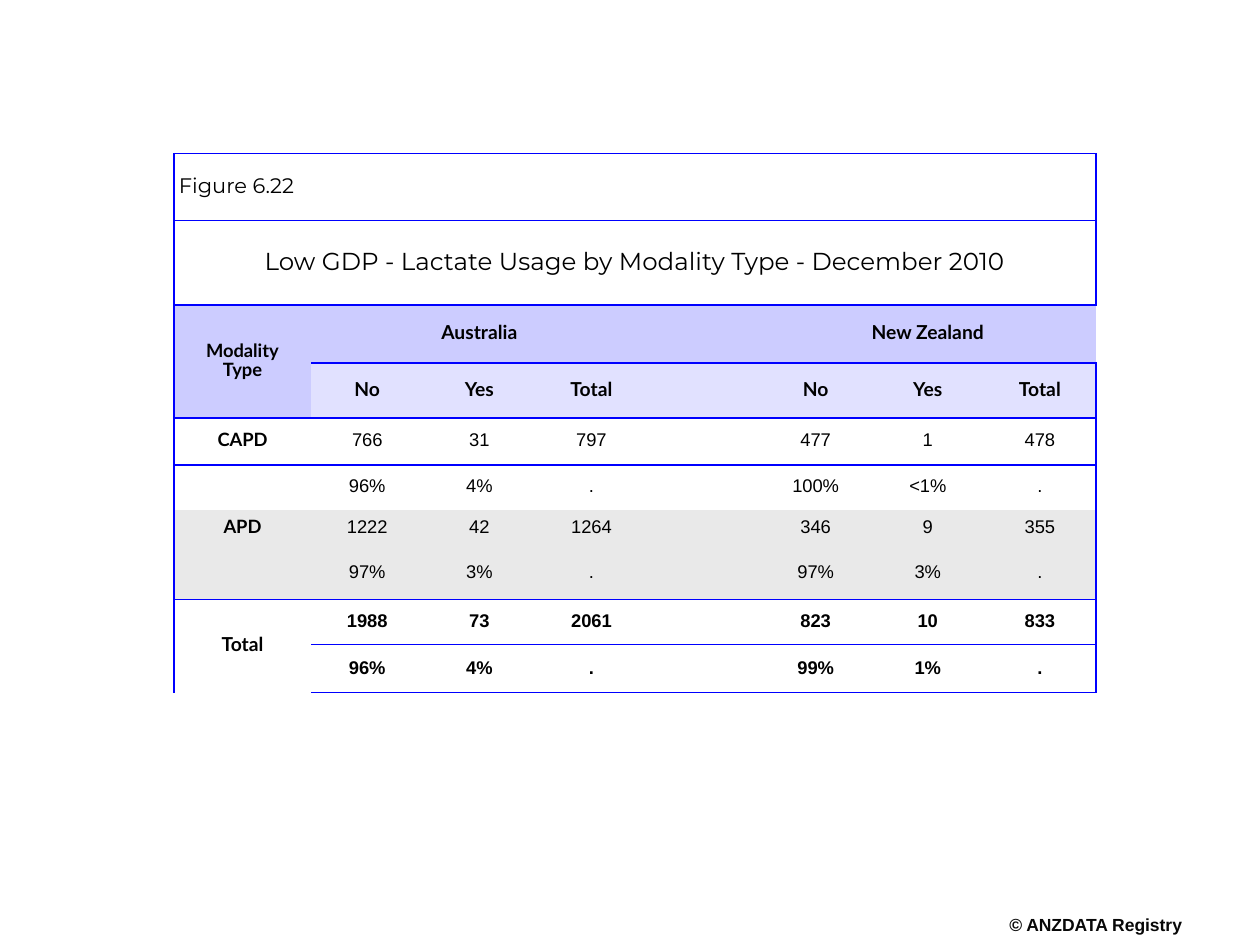
from lxml import etree
from pptx import Presentation
from pptx import util as u
from pptx.dml.color import RGBColor
from pptx.enum import text
from pptx.oxml import ns

BLACK = RGBColor(0x00, 0x00, 0x00)
INK = RGBColor(0x08, 0x08, 0x08)
BLUE = RGBColor(0x00, 0x00, 0xFF)
HEADER = RGBColor(0xCC, 0xCC, 0xFF)
SUBHEADER = RGBColor(0xE1, 0xE1, 0xFF)
BAND = RGBColor(0xE9, 0xE9, 0xE9)

NO_STYLE = "{2D5ABB26-0587-4C30-8999-92F81FD0307C}"
ROW_HEIGHTS = [0.53, 0.67, 0.46, 0.44, 0.37, 0.36, 0.29, 0.42, 0.36, 0.38]
COLUMN_WIDTHS = [1.09] + [0.89] * 7
ROW_FILLS = {2: HEADER, 3: SUBHEADER, 6: BAND, 7: BAND}
# Width in points of the rule above each listed row; the last is the bottom edge.
RULES = {0: 1, 1: 1, 2: 1, 3: 1, 4: 1, 8: 0.75, 10: 1}
# First row, first column, last row, last column.
SPANS = [(0, 0, 0, 7), (1, 0, 1, 7), (2, 0, 3, 0), (2, 1, 2, 3),
         (2, 5, 2, 7), (8, 0, 9, 0)]

ROWS = [
    ["Figure 6.22"],
    ["Low GDP - Lactate Usage by Modality Type - December 2010"],
    ["Modality\nType", "Australia", "", "", "", "New Zealand"],
    ["", "No", "Yes", "Total", "", "No", "Yes", "Total"],
    ["CAPD", "766", "31", "797", "", "477", "1", "478"],
    ["", "96%", "4%", ".", "", "100%", "<1%", "."],
    ["APD", "1222", "42", "1264", "", "346", "9", "355"],
    ["", "97%", "3%", ".", "", "97%", "3%", "."],
    ["Total", "1988", "73", "2061", "", "823", "10", "833"],
    ["", "96%", "4%", ".", "", "99%", "1%", "."],
]


class UsageSlide:
    def __init__(self, deck):
        self.page = deck.slides.add_slide(deck.slide_layouts[6])

    def format_para(self, para, font, size, bold=False, color=BLACK,
                    align=text.PP_ALIGN.CENTER, spacing=0.85):
        para.alignment = align
        para.line_spacing = spacing
        para.font.name = font
        para.font.size = u.Pt(size)
        para.font.bold = bold
        para.font.color.rgb = color

    def footer(self, words, left, top, width, height):
        box = self.page.shapes.add_textbox(
            *map(u.Inches, (left, top, width, height)))
        frame = box.text_frame
        frame.margin_left = frame.margin_right = 0
        frame.margin_top = frame.margin_bottom = 0
        frame.word_wrap = False
        frame.text = words
        self.format_para(frame.paragraphs[0], "Arial", 10, True, INK)

    def border(self, cell, side, width):
        line = etree.SubElement(cell._tc.get_or_add_tcPr(),
                                ns.qn(f"a:ln{side}"), w=str(u.Pt(width)))
        fill = etree.SubElement(line, ns.qn("a:solidFill"))
        etree.SubElement(fill, ns.qn("a:srgbClr"), val=str(BLUE))

    def cell_borders(self, cell, row, column):
        last = len(COLUMN_WIDTHS) - 1
        if column == 0 or row < 2:
            self.border(cell, "L", 1)
        if column == last or row < 2:
            self.border(cell, "R", 1)
        for side, edge in (("T", row), ("B", row + 1)):
            inside_label = column == 0 and edge == 3
            if edge in RULES and not inside_label:
                self.border(cell, side, RULES[edge])

    def cell_text(self, cell, words, row, column):
        cell.vertical_anchor = text.MSO_ANCHOR.MIDDLE
        cell.margin_left = cell.margin_right = u.Inches(0.04)
        cell.margin_top = cell.margin_bottom = u.Inches(0.04 if row < 2 else 0.02)
        cell.text = words
        for para in cell.text_frame.paragraphs:
            if not words:
                para._p.get_or_add_endParaRPr().set("sz", "1000")
            elif row == 0:
                self.format_para(para, "Montserrat", 12, align=text.PP_ALIGN.LEFT)
            elif row == 1:
                self.format_para(para, "Montserrat", 14)
            elif row < 4:
                self.format_para(para, "Lato", 11 if column else 10.5, True)
            elif column == 0:
                self.format_para(para, "Lato", 11 if row == 8 else 10.5, True,
                                 spacing=0.75)
            else:
                self.format_para(para, "Arial", 10.5, row >= 8)
                para.space_after = u.Pt(14)

    def table(self, left, top):
        frame = self.page.shapes.add_table(
            len(ROW_HEIGHTS), len(COLUMN_WIDTHS), u.Inches(left), u.Inches(top),
            u.Inches(sum(COLUMN_WIDTHS)), u.Inches(sum(ROW_HEIGHTS)))
        table = frame.table
        table.first_row = table.horz_banding = False
        table._tbl.tblPr.find(ns.qn("a:tableStyleId")).text = NO_STYLE
        for column, width in zip(table.columns, COLUMN_WIDTHS):
            column.width = u.Inches(width)
        for row, height in zip(table.rows, ROW_HEIGHTS):
            row.height = u.Inches(height)
        for row, words in enumerate(ROWS):
            words = words + [""] * (len(COLUMN_WIDTHS) - len(words))
            for column, word in enumerate(words):
                cell = table.cell(row, column)
                self.cell_text(cell, word, row, column)
                self.cell_borders(cell, row, column)
                if row in ROW_FILLS:
                    cell.fill.solid()
                    cell.fill.fore_color.rgb = ROW_FILLS[row]
                else:
                    cell.fill.background()
        for first_row, first_column, last_row, last_column in SPANS:
            table.cell(first_row, first_column).merge(
                table.cell(last_row, last_column))


def main():
    deck = Presentation()
    deck.slide_width, deck.slide_height = u.Inches(10), u.Inches(7.5)
    slide = UsageSlide(deck)
    slide.footer("© ANZDATA Registry", 7.99, 7.28, 1.41, 0.17)
    slide.table(1.38, 1.22)
    deck.save("out.pptx")


if __name__ == "__main__":
    main()
